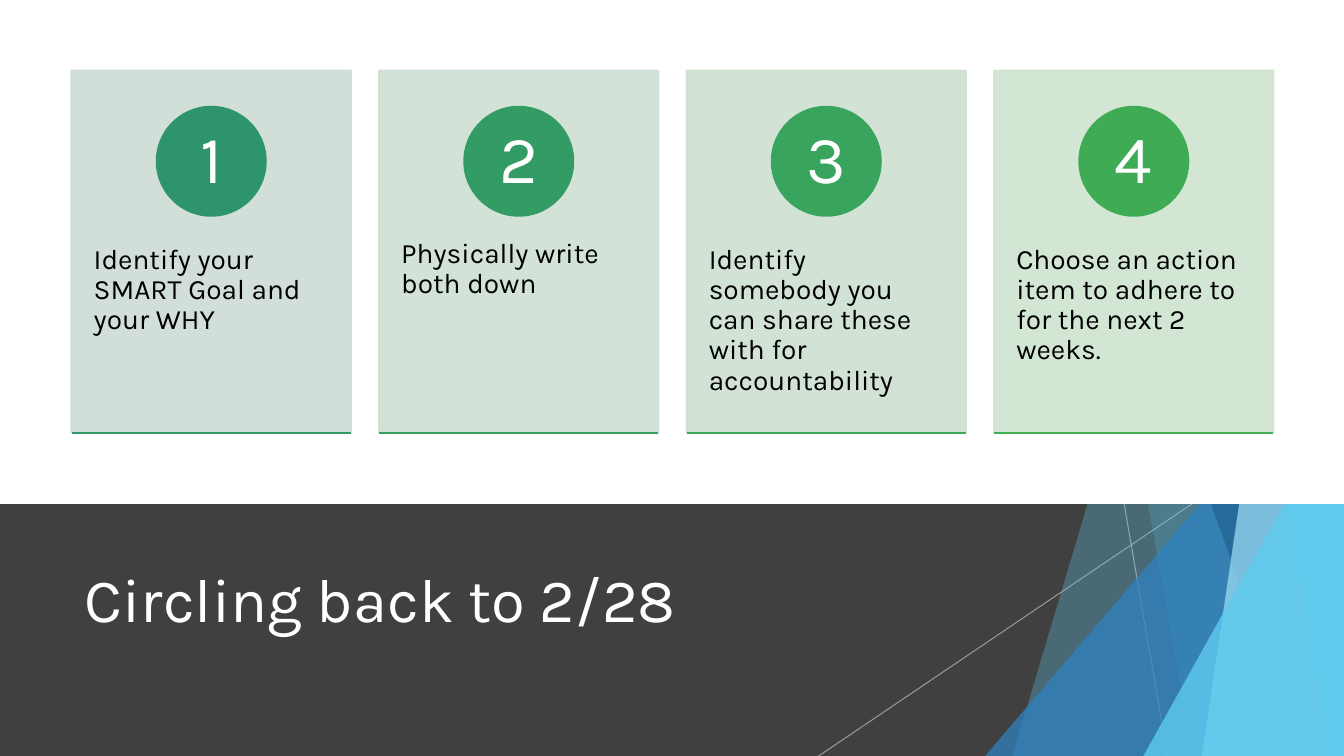
from lxml.etree import SubElement
from pptx import Presentation
from pptx.dml.color import RGBColor as Rgb
from pptx.enum.shapes import MSO_CONNECTOR as Conn, MSO_SHAPE as Shape
from pptx.enum.text import MSO_ANCHOR as Anchor, PP_ALIGN as Align
from pptx.oxml.ns import qn
from pptx.util import Inches, Pt

FONT = "Karla"
WIDE, HIGH, SPLIT = 13.33, 7.5, 5
COLORS = {
    "white": "FFFFFF", "black": "000000", "band": "404040", "ray": "BFBFBF",
    "sky": "5FCBEF", "blue": "2E83C3", "navy": "226292", "pale": "9FE0F5",
}
STEPS = [
    ("Identify your SMART Goal and your WHY", "CDDCD4", "2E946B", "319868"),
    ("Physically write both down", "CEDFD3", "339C64", "36A061"),
    ("Identify somebody you can share these with for accountability",
     "CEE1D2", "39A45D", "3CA859"),
    ("Choose an action item to adhere to for the next 2 weeks.",
     "CFE4D0", "3FAC55", "42B051"),
]


def fade(shape, alpha):
    """Set the opacity, in percent, of a shape's fill and line."""
    for color in shape.element.spPr.iter(qn("a:srgbClr")):
        SubElement(color, qn("a:alpha"), val=str(alpha * 1000))


def paint(shape, fill, alpha=100, edge=False):
    """Fill a shape, with an edge of the same colour if wanted."""
    shape.shadow.inherit = False
    shape.fill.solid()
    shape.fill.fore_color.rgb = Rgb.from_string(fill)
    if edge:
        shape.line.color.rgb = Rgb.from_string(fill)
        shape.line.width = Pt(1.5)
    else:
        shape.line.fill.background()
    if alpha < 100:
        fade(shape, alpha)


def add_form(slide, kind, box, fill, alpha=100, edge=False):
    """Add a painted preset shape."""
    shape = slide.shapes.add_shape(kind, *map(Inches, box))
    paint(shape, fill, alpha, edge)
    return shape


def add_line(slide, ends, color, width, alpha=100):
    """Add a straight line."""
    line = slide.shapes.add_connector(Conn.STRAIGHT, *map(Inches, ends))
    line.line.color.rgb = Rgb.from_string(color)
    line.line.width = Pt(width)
    SubElement(line.element.spPr, qn("a:effectLst"))
    if alpha < 100:
        fade(line, alpha)


def add_shard(slide, top, base, fill, alpha):
    """Add a full-height shard from a slanted left side to the right edge."""
    points = [(WIDE, 0), (WIDE, HIGH), (base, HIGH)]
    form = slide.shapes.build_freeform(Inches(top), 0, scale=1.0)
    form.add_line_segments([(Inches(x), Inches(y)) for x, y in points])
    paint(form.convert_to_shape(), fill, alpha)


def add_peak(slide, left, top, fill, alpha):
    """Add a right triangle in the lower right corner."""
    box = left, top, WIDE - left, HIGH - top
    peak = add_form(slide, Shape.ISOSCELES_TRIANGLE, box, fill, alpha)
    peak.adjustments[0] = 1


def add_text(slide, box, text, size, color, pads, align, anchor):
    """Add a wrapped text box with side and top pads."""
    frame = slide.shapes.add_textbox(*map(Inches, box)).text_frame
    frame.word_wrap = True
    frame.vertical_anchor = anchor
    frame.margin_left = frame.margin_right = Inches(pads[0])
    frame.margin_top = frame.margin_bottom = Inches(pads[1])
    para = frame.paragraphs[0]
    para.text = text
    para.alignment = align
    para.line_spacing = 0.9
    para.space_after = Pt(size * 0.35)
    para.font.name, para.font.size = FONT, Pt(size)
    para.font.color.rgb = Rgb.from_string(color)


def add_decor(slide):
    """Draw the dark band, its shards and the white upper area."""
    c = COLORS
    add_form(slide, Shape.RECTANGLE, (0, SPLIT, WIDE, HIGH - SPLIT), c["band"])
    for start, end in ((11.15, 11.58), (11.82, 8.12)):
        add_line(slide, (start, SPLIT, end, HIGH), c["ray"], 0.75, 70)
    add_shard(slide, 12.28, 10.04, c["sky"], 30)
    add_shard(slide, 10.5, 11.83, c["sky"], 20)
    add_peak(slide, 9.77, 3.33, c["blue"], 72)
    add_shard(slide, 10.21, 12.91, c["navy"], 70)
    add_shard(slide, 13.03, 11.92, c["pale"], 70)
    add_shard(slide, 11.96, 13.18, c["sky"], 65)
    add_peak(slide, 11.34, 3.93, c["sky"], 80)
    add_form(slide, Shape.RECTANGLE, (0, 0, WIDE, SPLIT), c["white"])


def set_title(slide, text):
    """Place and format the title above the band."""
    title = slide.shapes.title
    slide.shapes.element.append(title.element)
    title.left, title.top = Inches(0.74), Inches(5.21)
    title.width, title.height = Inches(9.4), Inches(1.44)
    title.text_frame.vertical_anchor = Anchor.MIDDLE
    para = title.text_frame.paragraphs[0]
    para.text = text
    para.alignment = Align.LEFT
    para.font.name, para.font.size = FONT, Pt(44)
    para.font.color.rgb = Rgb.from_string(COLORS["white"])


def add_card(slide, left, number, text, tint, disc, rule):
    """Add one numbered step card."""
    wide, mid = 2.77, left + 2.77 / 2
    add_form(slide, Shape.RECTANGLE, (left, 0.7, wide, 3.59), tint, 90, True)
    add_text(slide, (left, 2.07, wide, 2.16), text, 20, COLORS["black"],
             (0.22, 0.36), Align.LEFT, Anchor.TOP)
    add_form(slide, Shape.OVAL, (mid - 0.54, 1.06, 1.08, 1.08), disc, edge=True)
    add_text(slide, (mid - 0.38, 1.22, 0.76, 0.76), str(number), 48,
             COLORS["white"], (0.08, 0.01), Align.CENTER, Anchor.MIDDLE)
    add_line(slide, (left, 4.3, left + wide, 4.3), rule, 1.5)


def main():
    """Build the slide and save it."""
    deck = Presentation()
    deck.slide_width, deck.slide_height = Inches(WIDE), Inches(HIGH)
    slide = deck.slides.add_slide(deck.slide_layouts[5])
    add_decor(slide)
    set_title(slide, "Circling back to 2/28")
    for i, step in enumerate(STEPS):
        add_card(slide, 0.71 + i * 3.05, i + 1, *step)
    deck.save("out.pptx")


if __name__ == "__main__":
    main()
